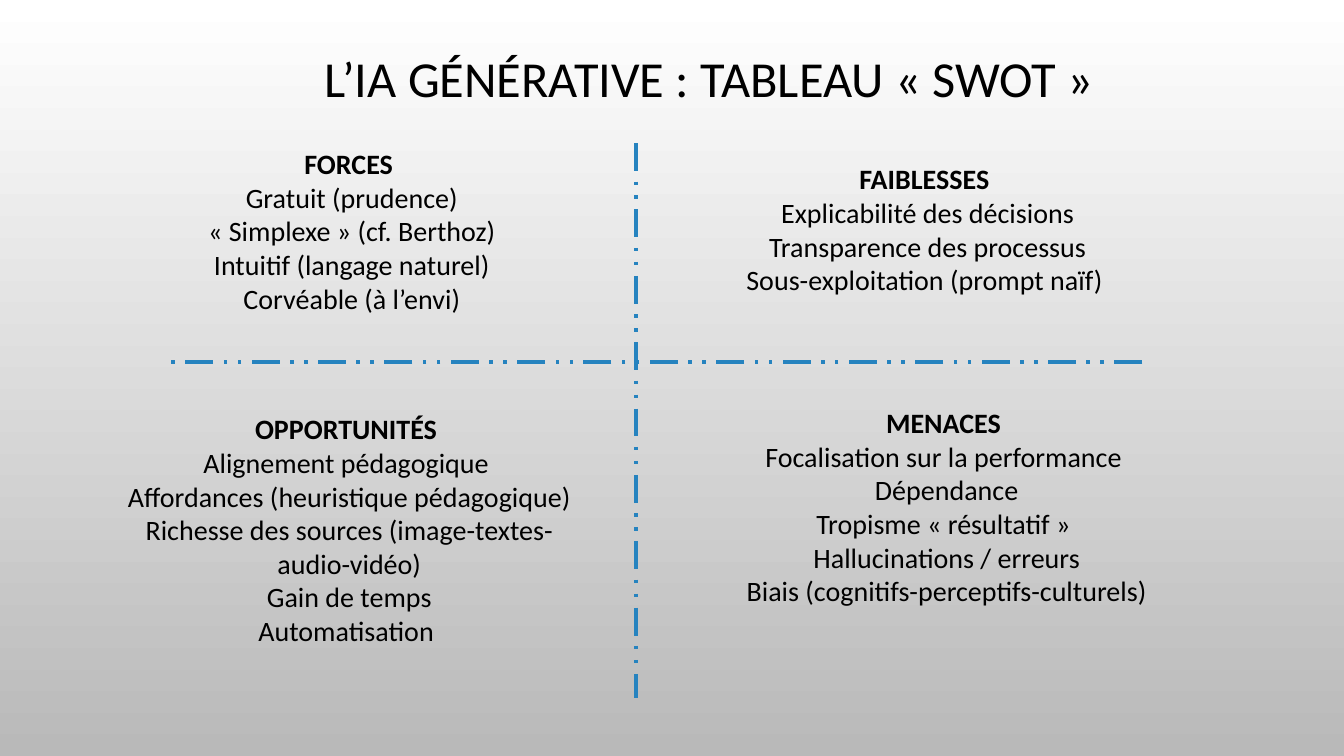
from lxml import etree
from pptx import Presentation
from pptx import util as u
from pptx.dml.color import RGBColor
from pptx.enum import dml, shapes, text
from pptx.oxml.ns import qn

WIDTH, HEIGHT = u.Inches(13.33), u.Inches(7.5)
FONT = "Calibri"
BLACK, BLUE = "000000", "2683BF"

# Left, top, width and height as percentages of the slide, then heading and items
QUADRANTS = [
    ((9.75, 17.87, 32.86, 26.67), "FORCES ",
     ["Gratuit (prudence)", "« Simplexe » (cf. Berthoz)",
      "Intuitif (langage naturel)", "Corvéable (à l’envi)"]),
    ((52.59, 19.87, 32.86, 24.8), "FAIBLESSES ",
     ["Explicabilité des décisions", "Transparence des processus",
      "Sous-exploitation (prompt naïf) "]),
    ((8.1, 52.93, 35.78, 34.4), "OPPORTUNITÉS ",
     ["Alignement pédagogique ", "Affordances (heuristique pédagogique)",
      "Richesse des sources (image-textes-audio-vidéo)",
      "Gain de temps", "Automatisation "]),
    ((54.01, 52.13, 32.86, 38.27), "MENACES ",
     ["Focalisation sur la performance ", "Dépendance",
      "Tropisme « résultatif » ", "Hallucinations / erreurs",
      "Biais (cognitifs-perceptifs-culturels)"]),
]


def color(hex_string):
    return RGBColor.from_string(hex_string)


def across(percent):
    return round(WIDTH * percent / 100)


def down(percent):
    return round(HEIGHT * percent / 100)


def paint_background(slide, top_color, bottom_color):
    fill = slide.background.fill
    fill.gradient()
    fill.gradient_angle = 270
    for stop, hex_string in zip(fill.gradient_stops, (top_color, bottom_color)):
        stop.color.rgb = color(hex_string)


def add_text_frame(slide, area):
    left, top, width, height = area
    box = slide.shapes.add_textbox(across(left), down(top), across(width), down(height))
    box.text_frame.word_wrap = True
    return box.text_frame


def write(paragraph, words, size, spacing=1.0, bold=False):
    paragraph.text = words
    paragraph.alignment = text.PP_ALIGN.CENTER
    paragraph.line_spacing = spacing
    font = paragraph.font
    font.name, font.size, font.bold = FONT, u.Pt(size), bold
    font.color.rgb = color(BLACK)


def add_title(slide, words):
    frame = add_text_frame(slide, (10.28, 2.67, 85, 16.13))
    frame.vertical_anchor = text.MSO_ANCHOR.MIDDLE
    write(frame.paragraphs[0], words, 36, spacing=0.9)


def add_quadrant(slide, area, heading, items):
    frame = add_text_frame(slide, area)
    write(frame.paragraphs[0], heading, 20, spacing=1.2, bold=True)
    for item in items:
        write(frame.add_paragraph(), item, 20)


def add_axis(slide, start, end):
    axis = slide.shapes.add_connector(
        shapes.MSO_CONNECTOR.STRAIGHT,
        across(start[0]), down(start[1]), across(end[0]), down(end[1]))
    axis.line.color.rgb = color(BLUE)
    axis.line.width = u.Pt(2.5)
    axis.line.dash_style = dml.MSO_LINE.DASH_DOT_DOT
    etree.SubElement(axis._element.spPr, qn("a:effectLst"))


def main():
    presentation = Presentation()
    presentation.slide_width, presentation.slide_height = WIDTH, HEIGHT
    slide = presentation.slides.add_slide(presentation.slide_layouts[6])
    paint_background(slide, "FFFFFF", "B9B9B9")
    add_title(slide, "L’IA GÉNÉRATIVE : TABLEAU « SWOT »")
    for area, heading, items in QUADRANTS:
        add_quadrant(slide, area, heading, items)
    add_axis(slide, (47.34, 18.93), (47.34, 92.27))
    add_axis(slide, (85, 47.87), (12, 47.87))
    presentation.save("out.pptx")


if __name__ == "__main__":
    main()
